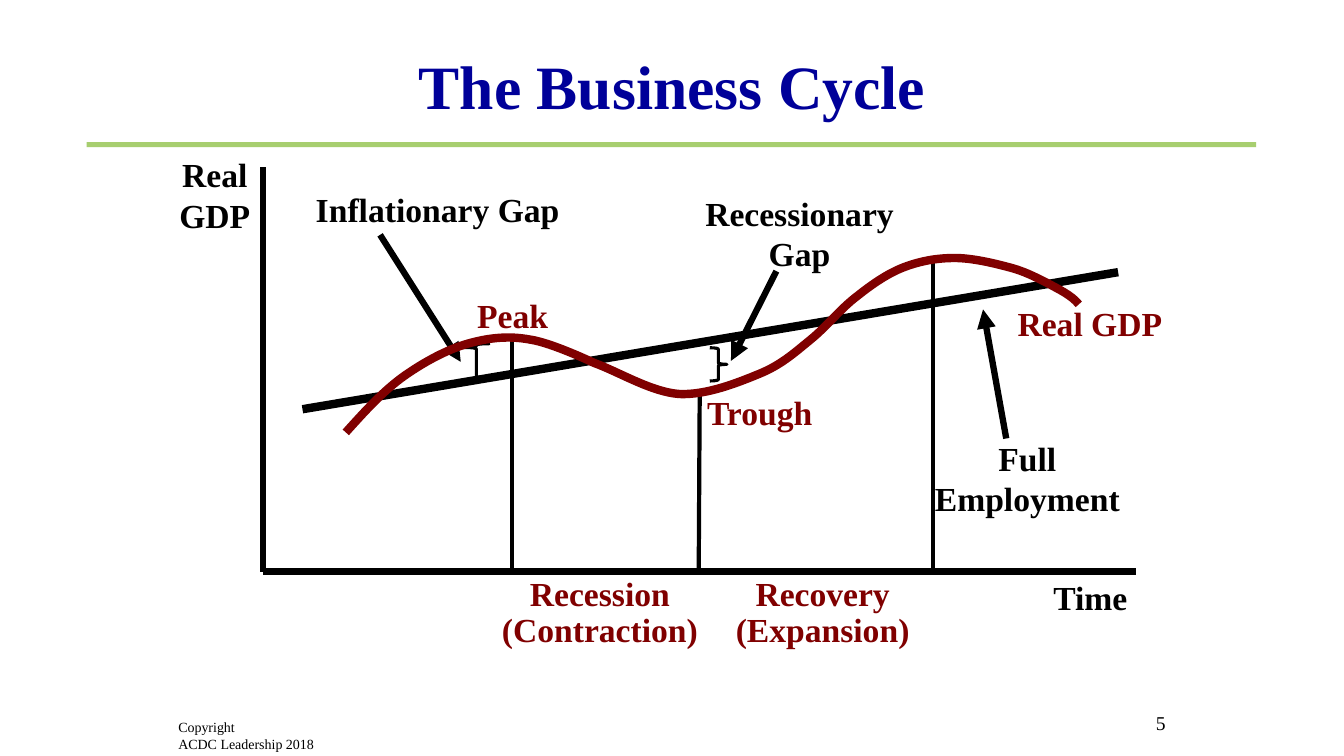
from pptx import Presentation
from pptx.dml.color import RGBColor
from pptx.enum.shapes import MSO_CONNECTOR, MSO_SHAPE as SHAPE
from pptx.enum.text import MSO_ANCHOR, PP_ALIGN as ALIGN
from pptx.oxml.ns import qn
from pptx.util import Emu, Pt
from lxml.etree import SubElement

PX = 9144  # 100 px to the inch
FONT = "Times New Roman"
BLACK, MAROON, NAVY, GREEN = "000000", "800000", "000099", "A7CE6F"

# Content: boxes are (left, top, width, height)
TITLE = ("The Business Cycle", (236, 42, 862, 84))
RULE = (86, 141, 1160, 5)
LABELS = [  # lines, box, colour, line spacing
    (["Inflationary Gap"], (277, 183, 314, 50), BLACK, None),
    (["Recessionary Gap"], (670, 186, 246, 50), BLACK, None),
    (["Full Employment"], (896, 429, 246, 91), BLACK, None),
    (["Time"], (998, 567, 167, 51), BLACK, None),
    (["Real GDP"], (144, 148, 138, 91), BLACK, None),
    (["Recession", "(Contraction)"], (472, 568, 246, 83), MAROON, 0.9),
    (["Recovery", "(Expansion)"], (693, 568, 246, 83), MAROON, 0.9),
    (["Peak"], (425, 288, 167, 51), MAROON, None),
    (["Trough"], (670, 384, 167, 51), MAROON, None),
    (["Real GDP"], (958, 296, 246, 51), MAROON, None),
]
PAGE_NUMBER = ("5", (958, 700, 208, 50))
COPYRIGHT = (["Copyright", "ACDC Leadership 2018"], (167, 708, 167, 50))

# Lines are (x1, y1, x2, y2)
PHASE_LINES = [(508, 338, 508, 567), (694, 392, 693, 567), (925, 261, 925, 566)]
GAP_ARROWS = [(770, 269, 725, 358), (998, 435, 975, 307), (377, 233, 457, 359)]
TREND = (300, 406, 1109, 270)
AXES = [(261, 166, 261, 567), (261, 567, 1127, 567)]
BRACES = [  # shape, box, adjustments
    (SHAPE.RIGHT_BRACE, (704, 345, 17, 33), (0.08, 0.5)),
    (SHAPE.LEFT_BRACE, (459, 341, 27, 34), (0.05, 0.11)),
]
# Real GDP curve: a start, then two control points and an end per segment
GDP_START = (343, 429)
GDP_CURVE = [
    (362, 408), (380, 388), (401, 373),
    (421, 359), (443, 347), (464, 341),
    (485, 335), (505, 333), (526, 337),
    (547, 340), (589, 360), (589, 360),
    (614, 369), (646, 389), (674, 391),
    (701, 392), (731, 380), (753, 371),
    (775, 362), (788, 350), (804, 337),
    (820, 324), (834, 306), (850, 294),
    (865, 282), (881, 271), (897, 265),
    (913, 259), (929, 256), (947, 256),
    (964, 256), (985, 261), (1000, 265),
    (1016, 269), (1027, 275), (1039, 281),
    (1050, 287), (1063, 293), (1070, 302),
]


def emu(lengths):
    return [Emu(n * PX) for n in lengths]


def rgb(color):
    return RGBColor.from_string(color)


def outline(sp, color, width):
    sp.line.color.rgb = rgb(color)
    sp.line.width = Pt(width)


def write(tf, lines, size, color, bold=False, align=ALIGN.CENTER, spacing=None):
    tf.word_wrap = True
    for i, text in enumerate(lines):
        p = tf.add_paragraph() if i else tf.paragraphs[0]
        p.alignment = align
        if spacing:
            p.line_spacing = spacing
        r = p.add_run()
        r.text = text
        r.font.name, r.font.size, r.font.bold = FONT, Pt(size), bold
        r.font.color.rgb = rgb(color)


def add_text(s, box, *args, **kwargs):
    write(s.shapes.add_textbox(*emu(box)).text_frame, *args, **kwargs)


def add_line(s, ends, width, arrow=False):
    line = s.shapes.add_connector(MSO_CONNECTOR.STRAIGHT, *emu(ends))
    outline(line, BLACK, width)
    if arrow:
        SubElement(line.line._get_or_add_ln(), qn("a:tailEnd"), type="triangle")
    SubElement(line._element.spPr, qn("a:effectLst"))


def add_curve(s, start, points, color, width):
    builder = s.shapes.build_freeform(*start, scale=PX)
    builder.add_line_segments(points, close=False)
    sp = builder.convert_to_shape()
    sp.shadow.inherit = False
    sp.fill.background()
    outline(sp, color, width)
    # Turn each three straight steps into one Bezier segment
    outline_path = next(sp._element.iter(qn("a:path")))
    steps = outline_path.findall(qn("a:lnTo"))
    for i in range(0, len(steps), 3):
        bezier = SubElement(outline_path, qn("a:cubicBezTo"))
        for step in steps[i:i + 3]:
            bezier.append(step[0])
            outline_path.remove(step)


def main():
    prs = Presentation()
    prs.slide_width, prs.slide_height = emu((1333, 750))
    s = prs.slides.add_slide(prs.slide_layouts[5])

    # Title and rule
    text, box = TITLE
    title = s.shapes.title
    title.left, title.top, title.width, title.height = emu(box)
    title.text_frame.vertical_anchor = MSO_ANCHOR.BOTTOM
    write(title.text_frame, [text], 44, NAVY, bold=True)
    rule = s.shapes.add_shape(SHAPE.RECTANGLE, *emu(RULE))
    rule.shadow.inherit = False
    rule.fill.solid()
    rule.fill.fore_color.rgb = rgb(GREEN)
    rule.line.fill.background()

    # Phase boundaries, gap braces and arrows
    for ends in PHASE_LINES:
        add_line(s, ends, 3)
    for kind, box, adjustments in BRACES:
        brace = s.shapes.add_shape(kind, *emu(box))
        brace.shadow.inherit = False
        brace.fill.background()
        outline(brace, BLACK, 2.25)
        for i, value in enumerate(adjustments):
            brace.adjustments[i] = value
    for ends in GAP_ARROWS:
        add_line(s, ends, 4.5, arrow=True)

    # Trend, real GDP and axes
    add_line(s, TREND, 6)
    add_curve(s, GDP_START, GDP_CURVE, MAROON, 6)
    for ends in AXES:
        add_line(s, ends, 4.5)

    # Labels and footer
    for lines, box, color, spacing in LABELS:
        add_text(s, box, lines, 24, color, bold=True, spacing=spacing)
    number, box = PAGE_NUMBER
    add_text(s, box, [number], 14, BLACK, align=ALIGN.RIGHT)
    lines, box = COPYRIGHT
    add_text(s, box, lines, 10, BLACK, align=ALIGN.LEFT)

    prs.save("out.pptx")


if __name__ == "__main__":
    main()
